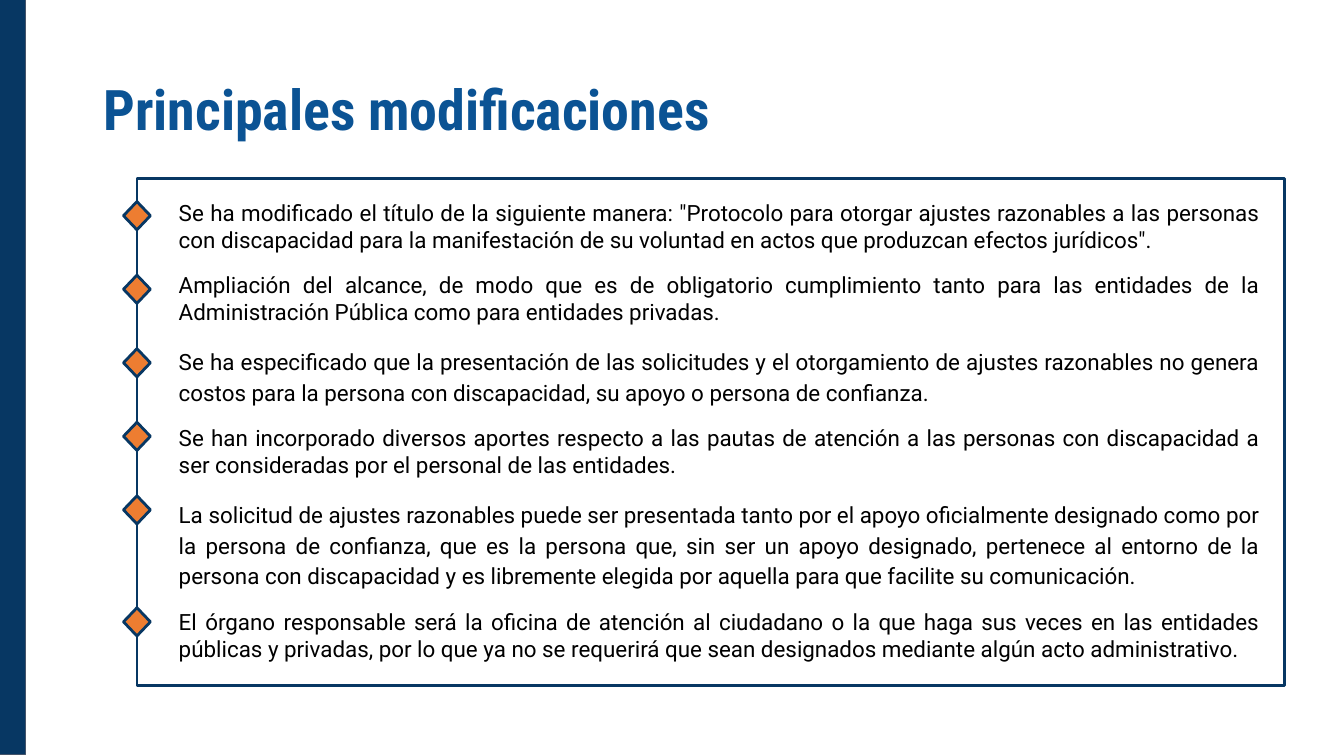
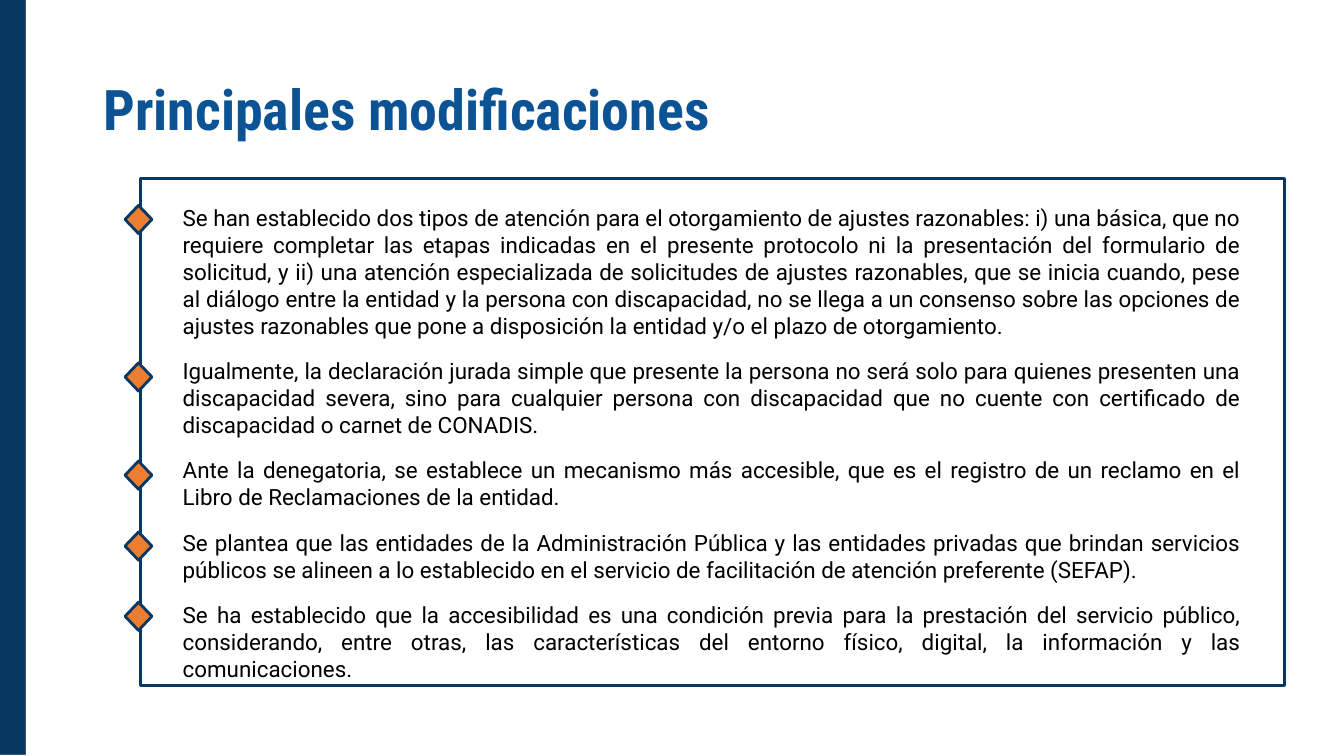
from pptx import Presentation
from pptx.dml.color import RGBColor
from pptx.enum.shapes import MSO_SHAPE
from pptx.enum.text import MSO_ANCHOR, MSO_AUTO_SIZE, PP_ALIGN
from pptx.util import Pt

COLORS = {
    "navy": "073763",
    "title": "0B5394",
    "band_line": "44546A",
    "orange": "ED7D31",
    "text": "000000",
}
TITLE = "Principales modificaciones"
TITLE_BOX = (48.2, 28.1, 640, 52.6)
BAND_BOX = (-0.7, -0.7, 14.4, 405)
MARKER_SIZE = (14.4, 15.1)
INDENT = 35.4

SLIDES = [
    {
        "frame": (73.4, 95.8, 614.9, 271.4),
        "text_box": (53.3, 99.4, 629.3, 265),
        "marker_left": 66.2,
        "items": [
            (108, 1, "Se ha modificado el título de la siguiente manera: \"Protocolo para otorgar ajustes razonables a las personas con discapacidad para la manifestación de su voluntad en actos que produzcan efectos jurídicos\"."),
            (147.4, 1, "Ampliación del alcance, de modo que es de obligatorio cumplimiento tanto para las entidades de la Administración Pública como para entidades privadas."),
            (186.8, 1.15, "Se ha especificado que la presentación de las solicitudes y el otorgamiento de ajustes razonables no genera costos para la persona con discapacidad, su apoyo o persona de confianza."),
            (226.2, 1, "Se han incorporado diversos aportes respecto a las pautas de atención a las personas con discapacidad a ser consideradas por el personal de las entidades."),
            (265.6, 1.15, "La solicitud de ajustes razonables puede ser presentada tanto por el apoyo oficialmente designado como por la persona de confianza, que es la persona que, sin ser un apoyo designado, pertenece al entorno de la persona con discapacidad y es libremente elegida por aquella para que facilite su comunicación."),
            (325.6, 1, "El órgano responsable será la oficina de atención al ciudadano o la que haga sus veces en las entidades públicas y privadas, por lo que ya no se requerirá que sean designados mediante algún acto administrativo."),
        ],
    },
    {
        "frame": (75.2, 95.8, 612.9, 271.4),
        "text_box": (55.4, 102.2, 617, 272.9),
        "marker_left": 67,
        "items": [
            (110, 1, "Se han establecido dos tipos de atención para el otorgamiento de ajustes razonables: i) una básica, que no requiere completar las etapas indicadas en el presente protocolo ni la presentación del formulario de solicitud, y ii) una atención especializada de solicitudes de ajustes razonables, que se inicia cuando, pese al diálogo entre la entidad y la persona con discapacidad, no se llega a un consenso sobre las opciones de ajustes razonables que pone a disposición la entidad y/o el plazo de otorgamiento."),
            (194.4, 1, "Igualmente, la declaración jurada simple que presente la persona no será solo para quienes presenten una discapacidad severa, sino para cualquier persona con discapacidad que no cuente con certificado de discapacidad o carnet de CONADIS."),
            (247, 1, "Ante la denegatoria, se establece un mecanismo más accesible, que es el registro de un reclamo en el Libro de Reclamaciones de la entidad."),
            (285, 1, "Se plantea que las entidades de la Administración Pública y las entidades privadas que brindan servicios públicos se alineen a lo establecido en el servicio de facilitación de atención preferente (SEFAP)."),
            (322.6, 1, "Se ha establecido que la accesibilidad es una condición previa para la prestación del servicio público, considerando, entre otras, las características del entorno físico, digital, la información y las comunicaciones."),
        ],
    },
]


def rgb(name):
    return RGBColor.from_string(COLORS[name])


def points(values):
    return [Pt(v) for v in values]


def add_box(s, kind, box, line, width, fill=None):
    sp = s.shapes.add_shape(kind, *points(box))
    sp.shadow.inherit = False
    if fill:
        sp.fill.solid()
        sp.fill.fore_color.rgb = rgb(fill)
    else:
        sp.fill.background()
    sp.line.color.rgb = rgb(line)
    sp.line.width = Pt(width)


def write(p, text, *, font, size, color, bold=False, align=PP_ALIGN.LEFT,
          spacing=1, before=0, after=0, indent=0):
    p.alignment = align
    p.line_spacing = spacing
    p.space_before = Pt(before)
    p.space_after = Pt(after)
    if indent:
        pPr = p._p.get_or_add_pPr()
        pPr.set("marL", str(Pt(indent)))
        pPr.set("indent", "0")
    r = p.add_run()
    r.text = text
    r.font.name = font
    r.font.size = Pt(size)
    r.font.bold = bold
    r.font.color.rgb = rgb(color)


def set_frame(tf, anchor, auto_size):
    tf.word_wrap = True
    tf.auto_size = auto_size
    tf.vertical_anchor = anchor
    tf.margin_left = tf.margin_right = tf.margin_top = tf.margin_bottom = Pt(7.2)


def add_title(s):
    sp = s.shapes.title
    sp.left, sp.top, sp.width, sp.height = points(TITLE_BOX)
    set_frame(sp.text_frame, MSO_ANCHOR.MIDDLE, MSO_AUTO_SIZE.NONE)
    write(sp.text_frame.paragraphs[0], TITLE, font="Roboto Condensed", size=30,
          color="title", bold=True, spacing=1.2)


def add_items(s, box, items):
    tf = s.shapes.add_textbox(*points(box)).text_frame
    set_frame(tf, MSO_ANCHOR.TOP, MSO_AUTO_SIZE.SHAPE_TO_FIT_TEXT)
    last = len(items) - 1
    for i, (_, spacing, text) in enumerate(items):
        p = tf.add_paragraph() if i else tf.paragraphs[0]
        write(p, text, font="Roboto", size=12, color="text",
              align=PP_ALIGN.JUSTIFY, spacing=spacing, before=10 if i else 0,
              after=10 if i == last else 0, indent=INDENT)


def build_slide(prs, content):
    s = prs.slides.add_slide(prs.slide_layouts[5])
    add_box(s, MSO_SHAPE.RECTANGLE, content["frame"], "navy", 1.5)
    add_title(s)
    add_box(s, MSO_SHAPE.RECTANGLE, BAND_BOX, "band_line", 0.75, "navy")
    add_items(s, content["text_box"], content["items"])
    for top, _, _ in content["items"]:
        add_box(s, MSO_SHAPE.DIAMOND, (content["marker_left"], top, *MARKER_SIZE),
                "navy", 1.5, "orange")


def main():
    prs = Presentation()
    prs.slide_width, prs.slide_height = Pt(720), Pt(405)
    for content in SLIDES:
        build_slide(prs, content)
    prs.save("out.pptx")


if __name__ == "__main__":
    main()
